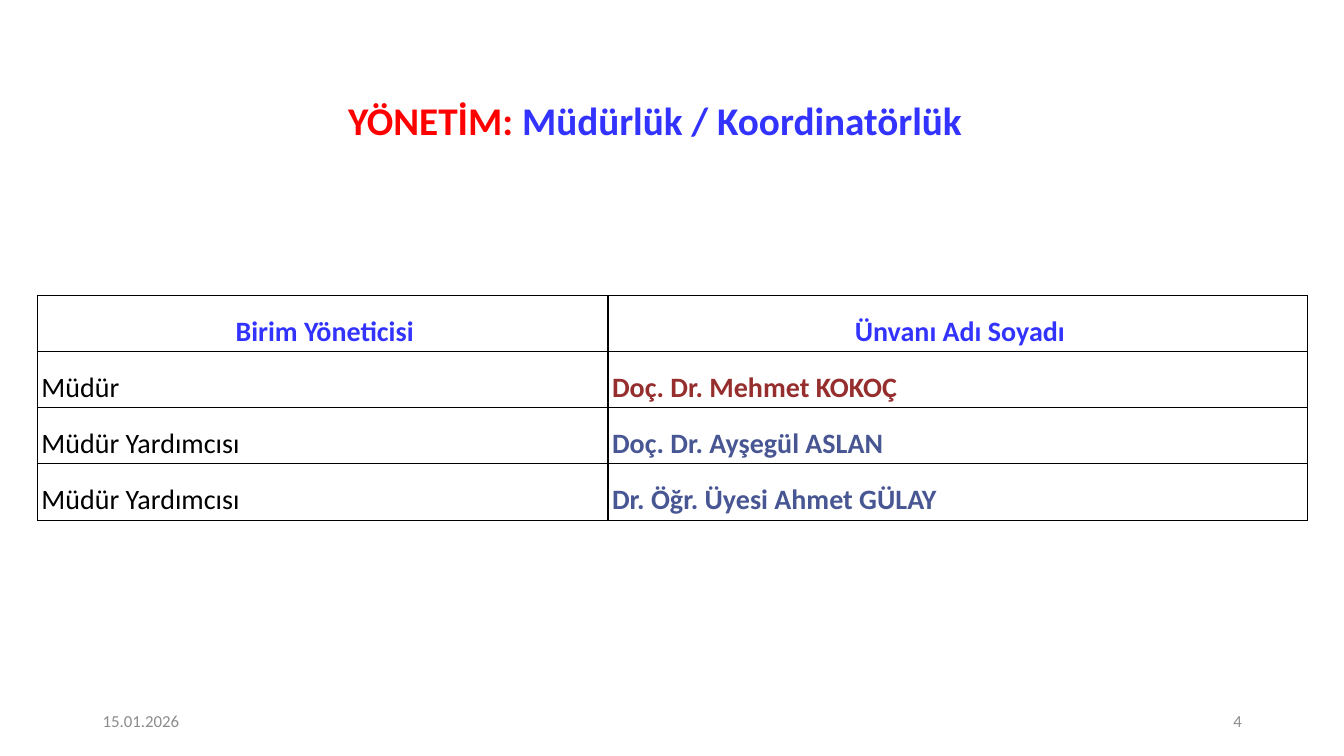
import pptx
import pptx.util
import pptx.dml.color
import pptx.enum.text
import pptx.oxml.ns
import lxml.etree

INK = {
    "black": "000000", "white": "FFFFFF", "red": "FF0000", "blue": "3333FF",
    "wine": "962E2E", "slate": "485793", "grey": "8C8C8C",
}
ALIGN = pptx.enum.text.PP_ALIGN
MIDDLE = pptx.enum.text.MSO_ANCHOR.MIDDLE


def color(name):
    return pptx.dml.color.RGBColor.from_string(INK[name])


def write(para, text, size=20, ink="black", bold=False, font="Calibri",
          align=ALIGN.LEFT, space=None, indent=0):
    para.alignment = align
    if space:
        para.line_spacing = space
    if indent:
        props = para._p.get_or_add_pPr()
        props.set("marL", str(pptx.util.Inches(indent)))
        props.set("indent", "0")
    run = para.add_run()
    run.text = text
    run.font.name = font
    run.font.size = pptx.util.Pt(size)
    run.font.bold = bold
    run.font.color.rgb = color(ink)


class Page:
    def __init__(self, deck):
        self.wide, self.high = deck.slide_width, deck.slide_height
        self.slide = deck.slides.add_slide(deck.slide_layouts[5])

    def across(self, share):
        return int(self.wide * share / 100)

    def down(self, share):
        return int(self.high * share / 100)

    def place(self, left, top, width, height):
        return (self.across(left), self.down(top),
                self.across(width), self.down(height))

    def title(self, spot, parts):
        shape = self.slide.shapes.title
        shape.left, shape.top, shape.width, shape.height = self.place(*spot)
        frame = shape.text_frame
        frame.word_wrap = True
        frame.vertical_anchor = MIDDLE
        for text, ink in parts:
            write(frame.paragraphs[0], text, size=28, ink=ink, bold=True,
                  align=ALIGN.CENTER, space=0.9)

    def label(self, spot, text, align):
        frame = self.slide.shapes.add_textbox(*self.place(*spot)).text_frame
        frame.word_wrap = True
        frame.vertical_anchor = MIDDLE
        write(frame.paragraphs[0], text, size=12, ink="grey", align=align)

    def border(self, cell):
        props = cell._tc.get_or_add_tcPr()
        name = pptx.oxml.ns.qn
        for side in ("lnL", "lnR", "lnT", "lnB"):
            line = lxml.etree.SubElement(props, name("a:" + side),
                                         w=str(pptx.util.Pt(1)))
            fill = lxml.etree.SubElement(line, name("a:solidFill"))
            lxml.etree.SubElement(fill, name("a:srgbClr"), val=INK["black"])

    def table(self, left, top, cols, rows, data):
        spot = self.place(left, top, sum(cols), sum(rows))
        grid = self.slide.shapes.add_table(len(rows), len(cols), *spot).table
        grid.first_row = grid.horz_banding = False
        for col, width in zip(grid.columns, cols):
            col.width = self.across(width)
        for row, height, line in zip(grid.rows, rows, data):
            row.height = self.down(height)
            for cell, (text, look) in zip(row.cells, line):
                cell.margin_left = cell.margin_right = 0
                cell.margin_top = cell.margin_bottom = 0
                cell.vertical_anchor = MIDDLE
                self.border(cell)
                cell.fill.solid()
                cell.fill.fore_color.rgb = color("white")
                write(cell.text_frame.paragraphs[0], text, space=1.5,
                      indent=0.04, **look)


def main():
    deck = pptx.Presentation()
    deck.slide_width = pptx.util.Inches(13.33)
    deck.slide_height = pptx.util.Inches(7.5)
    page = Page(deck)
    page.title((8.55, 11.2, 80.35, 10.13),
               [("YÖNETİM: ", "red"), ("Müdürlük / Koordinatörlük", "blue")])

    head = {"ink": "blue", "bold": True, "align": ALIGN.CENTER}
    chief = {"ink": "wine", "bold": True}
    aide = {"ink": "slate", "bold": True}
    page.table(2.78, 39.07, [42.46, 52.06], [7.4, 7.4, 7.4, 7.6], [
        [("Birim Yöneticisi", head), ("Ünvanı Adı Soyadı", head)],
        [("Müdür", {}), ("Doç. Dr. Mehmet KOKOÇ", chief)],
        [("Müdür Yardımcısı", {}), ("Doç. Dr. Ayşegül ASLAN", aide)],
        [("Müdür Yardımcısı", {}), ("Dr. Öğr. Üyesi Ahmet GÜLAY", aide)],
    ])

    page.label((6.9, 92.67, 22.5, 5.33), "15.01.2026", ALIGN.LEFT)
    page.label((70.65, 92.67, 22.5, 5.33), "4", ALIGN.RIGHT)
    deck.save("out.pptx")


if __name__ == "__main__":
    main()
